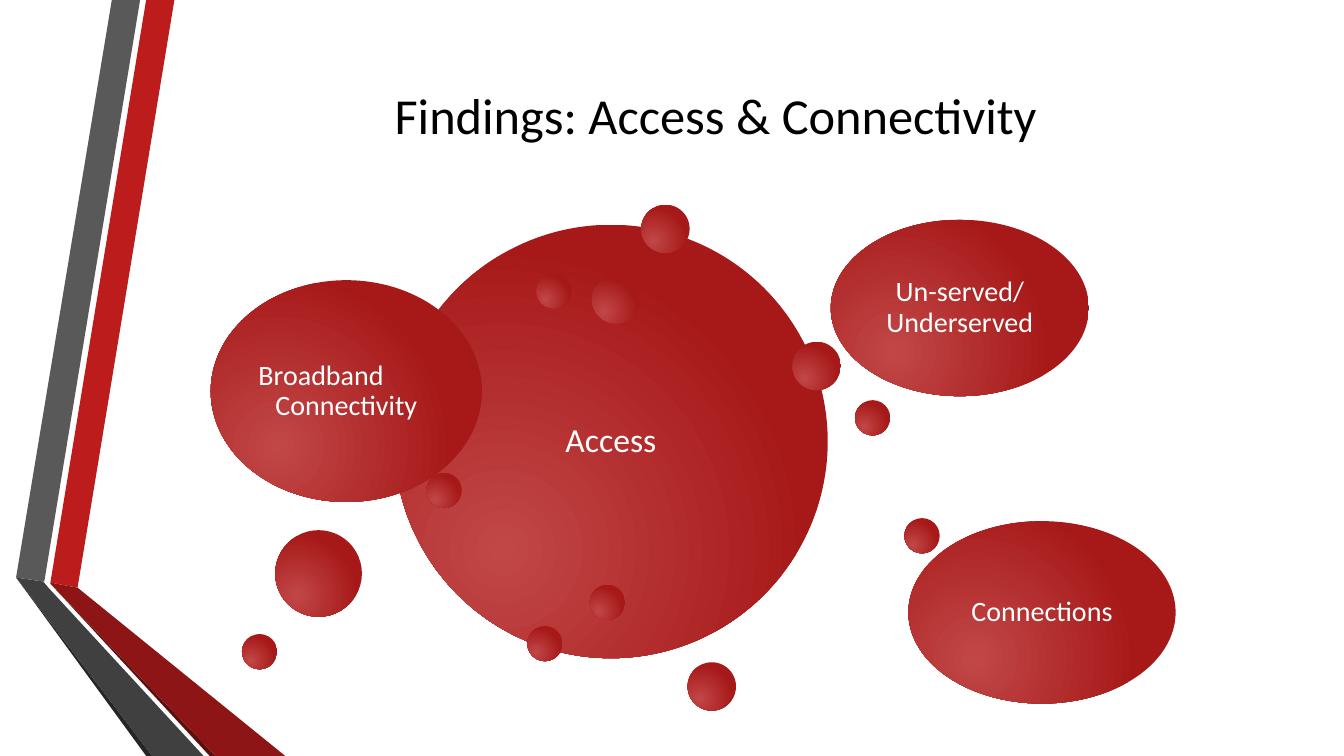
"""Build the Access & Connectivity findings slide with its bubble diagram."""
from lxml.etree import SubElement
from pptx import Presentation
from pptx.dml.color import RGBColor
from pptx.enum.shapes import MSO_SHAPE as SHAPE
from pptx.enum.text import MSO_ANCHOR as ANCHOR, PP_ALIGN as ALIGN
from pptx.oxml.ns import qn
from pptx.util import Inches, Pt


def rgb(value):
    return RGBColor.from_string(value)


def add_bubble(shapes, x, y, w, h):
    s = shapes.add_shape(SHAPE.OVAL, Inches(x), Inches(y), Inches(w), Inches(h))
    s.shadow.inherit = False
    s.line.fill.background()
    s.fill.gradient()
    for stop, color in zip(s.fill.gradient_stops, ("C14747", "A71919")):
        stop.color.rgb = rgb(color)
    grad = s.element.spPr.find(qn("a:gradFill"))
    grad.remove(grad.find(qn("a:lin")))
    radial = SubElement(grad, qn("a:path"), path="circle")
    SubElement(radial, qn("a:fillToRect"), l="50000", t="100000", r="100000", b="50000")
    return s


prs = Presentation()
prs.slide_width, prs.slide_height = Inches(13.33), Inches(7.5)
slide = prs.slides.add_slide(prs.slide_layouts[5])
shapes = slide.shapes

ribbons = [
    ("BC1C1C", [(0.5, 5.78), (0.77, 5.83), (1.73, 0), (1.45, 0)]),
    ("595959", [(1.39, 0), (1.11, 0), (0.16, 5.73), (0.44, 5.77)]),
    ("262626", [(0.16, 5.73), (1.45, 7.5), (1.51, 7.5)]),
    ("5E0E0E", [(0.5, 5.79), (2.08, 7.5), (2.14, 7.5)]),
    ("8D1515", [(0.5, 5.79), (2.14, 7.5), (2.83, 7.5), (0.77, 5.83), (0.5, 5.78)]),
    ("404040", [(2.02, 7.5), (0.48, 5.83), (0.43, 5.77), (0.16, 5.73), (1.51, 7.5)]),
]
for color, corners in ribbons:
    points = [(Inches(x), Inches(y)) for x, y in corners]
    builder = shapes.build_freeform(*points[0])
    builder.add_line_segments(points[1:], close=True)
    s = builder.convert_to_shape()
    s.shadow.inherit = False
    s.fill.solid()
    s.fill.fore_color.rgb = rgb(color)
    s.line.fill.background()

title = shapes.title
title.left, title.top = Inches(1.62), Inches(0.75)
title.width, title.height = Inches(10.96), Inches(0.76)
title.text = "Findings: Access & Connectivity"
title.text_frame.vertical_anchor = ANCHOR.MIDDLE
p = title.text_frame.paragraphs[0]
p.alignment = ALIGN.CENTER
p.font.name, p.font.size = "Calibri", Pt(36)
p.font.color.rgb = rgb("000000")

topics = [
    (3.91, 2.23, 4.3, 4.3, "Access", 24, 0.1),
    (2.09, 2.78, 2.69, 2.2, "Broadband\nConnectivity", 20, 0.08),
    (8.24, 2.18, 2.56, 1.75, "Un-served/Underserved", 20, 0.08),
    (9.01, 5.17, 2.65, 1.81, "Connections", 20, 0.08),
]
for x, y, w, h, text, size, inset in topics:
    s = add_bubble(shapes, x, y, w, h)
    tf = s.text_frame
    tf.word_wrap = True
    tf.vertical_anchor = ANCHOR.MIDDLE
    tf.margin_left = tf.margin_right = tf.margin_top = tf.margin_bottom = Inches(inset)
    tf.text = text
    for p in tf.paragraphs:
        p.alignment = ALIGN.LEFT if p.text == "Broadband" else ALIGN.CENTER
        p.line_spacing = 0.9
        p.font.name, p.font.size = "Calibri", Pt(size)
        p.font.color.rgb = rgb("FFFFFF")

dots = {
    0.35: [(5.23, 6.21), (8.48, 3.97), (5.32, 2.71), (4.23, 4.69),
           (2.4, 6.29), (5.85, 5.8), (8.97, 5.14)],
    0.48: [(6.36, 2.03), (6.82, 6.57), (5.87, 2.73), (7.86, 3.39)],
    0.86: [(2.73, 5.26)],
}
for size, places in dots.items():
    for x, y in places:
        add_bubble(shapes, x, y, size, size)

prs.save("out.pptx")
